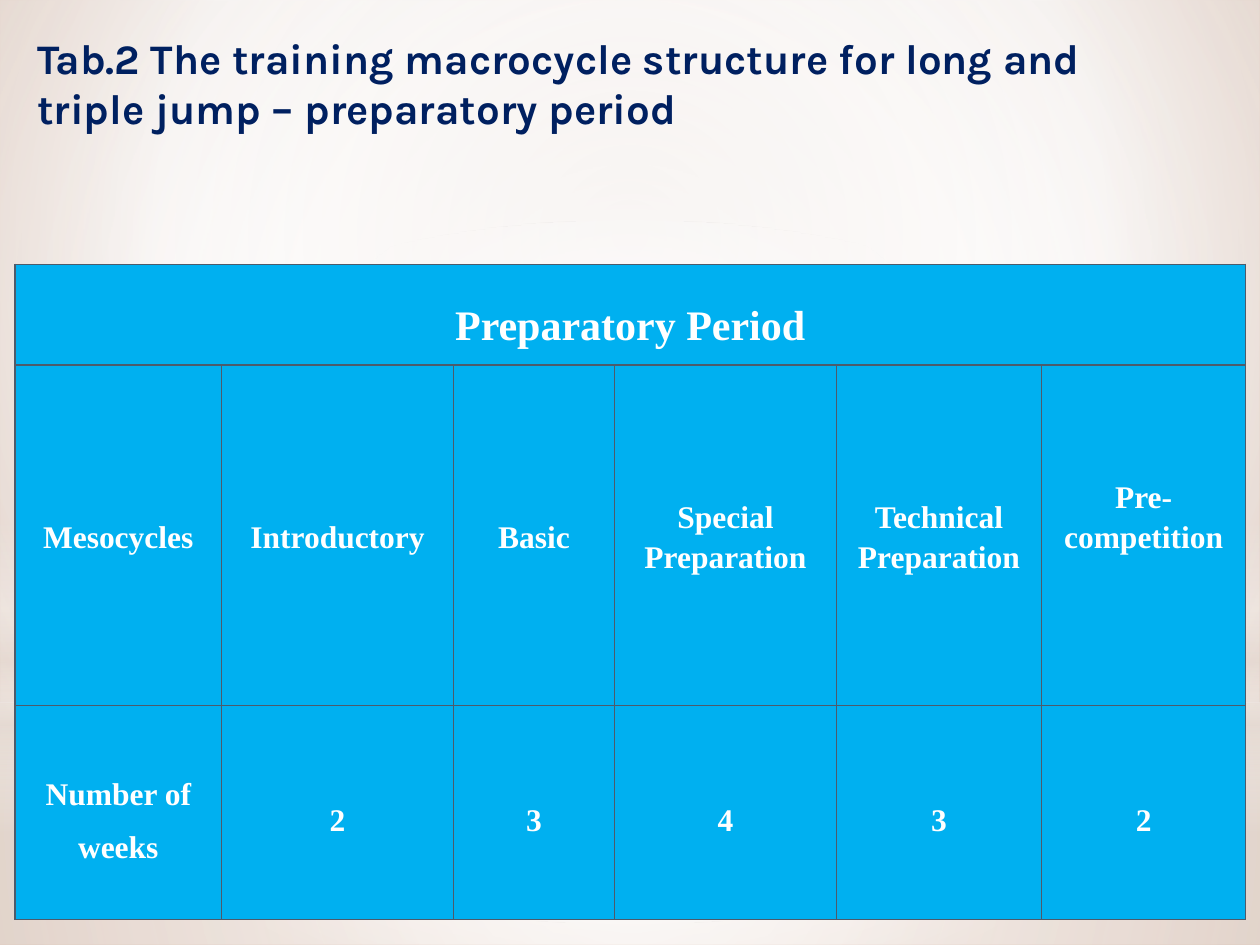
"""Build the slide showing the preparatory period of the jump training macrocycle."""
from lxml import etree
from pptx import Presentation
from pptx.dml.color import RGBColor
from pptx.enum.shapes import MSO_SHAPE
from pptx.enum.text import MSO_ANCHOR, PP_ALIGN
from pptx.oxml.ns import qn
from pptx.util import Cm, Pt

RECT, OVAL = MSO_SHAPE.RECTANGLE, MSO_SHAPE.OVAL
MIDDLE, CENTER = MSO_ANCHOR.MIDDLE, PP_ALIGN.CENTER

COLORS = {
    "navy": "002060", "cell": "00B0F0", "border": "4D5B6B", "white": "FFFFFF",
    "sand": "E3D4CB", "clay": "CFAD99", "mist": "E8DED8",
}
TITLE = ["Tab.2 The training macrocycle structure for long and",
         "triple jump – preparatory period"]
HEADING = "Preparatory Period"
MESOCYCLES = [["Mesocycles"], ["Introductory"], ["Basic"], ["Special", "Preparation"],
              ["Technical Preparation"], ["Pre-", "competition"]]
WEEKS = ["Number of weeks", "2", "3", "4", "3", "2"]
COL_WIDTHS = [4.17, 4.67, 3.25, 4.47, 4.14, 4.11]
ROW_HEIGHTS = [2.03, 6.86, 4.32]

CENTRED = (50, 50, 50, 50)
BACKDROP = [(0, "sand", 100), (60, "white", 100), (100, "clay", 100)]
LAYERS = [
    (RECT, 14.17, 4.88, CENTRED, [(0, "white", 91), (37, "white", 76), (100, "mist", 79)]),
    (RECT, 0, 14.17, CENTRED, [(0, "white", 89), (48, "white", 62), (100, "mist", 79)]),
    (RECT, 10.46, 6.35, None, [(0, "white", 0), (29, "white", 30), (45, "mist", 40),
                               (55, "white", 26), (65, "mist", 60), (100, "white", 0)]),
    (OVAL, 4.45, 14.17, CENTRED, [(0, "white", 100), (56, "white", 0)]),
]


def rgb(name):
    return RGBColor.from_string(COLORS[name])


def add_color(parent, name, alpha=100):
    clr = etree.SubElement(parent, qn("a:srgbClr"), val=COLORS[name])
    if alpha < 100:
        etree.SubElement(clr, qn("a:alpha"), val=str(alpha * 1000))


def set_gradient(fill, parent, stops, focus):
    fill.solid()
    old = parent.find(qn("a:solidFill"))
    grad = etree.Element(qn("a:gradFill"), rotWithShape="1")
    gs_lst = etree.SubElement(grad, qn("a:gsLst"))
    for pos, name, alpha in stops:
        add_color(etree.SubElement(gs_lst, qn("a:gs"), pos=str(pos * 1000)), name, alpha)
    if focus:
        way = etree.SubElement(grad, qn("a:path"))
        way.set("path", "circle")
        sides = {side: str(v * 1000) for side, v in zip("ltrb", focus)}
        etree.SubElement(way, qn("a:fillToRect"), sides)
    else:
        etree.SubElement(grad, qn("a:lin"), ang="5400000", scaled="0")
    parent.replace(old, grad)


def add_run(p, text, size, font, color):
    r = p.add_run()
    r.text = text
    r.font.size, r.font.name, r.font.bold = Pt(size), font, True
    r.font.color.rgb = rgb(color)


def fill_cell(cell, lines, size=18, spacing=1.15, after=0):
    cell.vertical_anchor = MIDDLE
    tf = cell.text_frame
    for i, text in enumerate(lines):
        p = tf.add_paragraph() if i else tf.paragraphs[0]
        p.alignment, p.line_spacing, p.space_after = CENTER, spacing, Pt(after)
        add_run(p, text, size, "Times New Roman", "white")


def style_cell(cell):
    cell.margin_left = cell.margin_right = Cm(0.13)
    cell.margin_top = cell.margin_bottom = 0
    tc_pr = cell._tc.get_or_add_tcPr()
    for side in ("a:lnL", "a:lnR", "a:lnT", "a:lnB"):
        ln = etree.SubElement(tc_pr, qn(side), w=str(Pt(1)))
        add_color(etree.SubElement(ln, qn("a:solidFill")), "border")
    cell.fill.solid()
    cell.fill.fore_color.rgb = rgb("cell")


def add_backdrop(s):
    fill = s.background.fill
    fill.solid()
    set_gradient(fill, next(s.element.iter(qn("p:bgPr"))), BACKDROP, (20, 10, 20, 60))
    for kind, top, height, focus, stops in LAYERS:
        sp = s.shapes.add_shape(kind, 0, Cm(top), Cm(25.4), Cm(height))
        sp.shadow.inherit = False
        sp.line.fill.background()
        set_gradient(sp.fill, sp.element.spPr, stops, focus)


def add_title(s):
    tf = s.shapes.add_textbox(Cm(0.5), Cm(0.53), Cm(24.4), Cm(3.4)).text_frame
    tf.word_wrap = True
    p = tf.paragraphs[0]
    for i, text in enumerate(TITLE):
        if i:
            p.add_line_break()
        add_run(p, text, 24, "Karla", "navy")


def add_period_table(s):
    table = s.shapes.add_table(len(ROW_HEIGHTS), len(COL_WIDTHS), Cm(0.3), Cm(5.33),
                               Cm(sum(COL_WIDTHS)), Cm(sum(ROW_HEIGHTS))).table
    for col, width in zip(table.columns, COL_WIDTHS):
        col.width = Cm(width)
    for row, height in zip(table.rows, ROW_HEIGHTS):
        row.height = Cm(height)
    for cell in table.iter_cells():
        style_cell(cell)
    table.cell(0, 0).merge(table.cell(0, len(COL_WIDTHS) - 1))
    fill_cell(table.cell(0, 0), [HEADING], size=24, spacing=1.5, after=10)
    for c, (lines, weeks) in enumerate(zip(MESOCYCLES, WEEKS)):
        fill_cell(table.cell(1, c), lines, after=0 if c else 10)
        fill_cell(table.cell(2, c), [weeks], spacing=1.5, after=10)
    table.cell(1, len(COL_WIDTHS) - 1).margin_bottom = Cm(0.81)


def main():
    prs = Presentation()
    prs.slide_width, prs.slide_height = Cm(25.4), Cm(19.05)
    s = prs.slides.add_slide(prs.slide_layouts[6])
    add_backdrop(s)
    add_title(s)
    add_period_table(s)
    prs.save("out.pptx")


if __name__ == "__main__":
    main()
